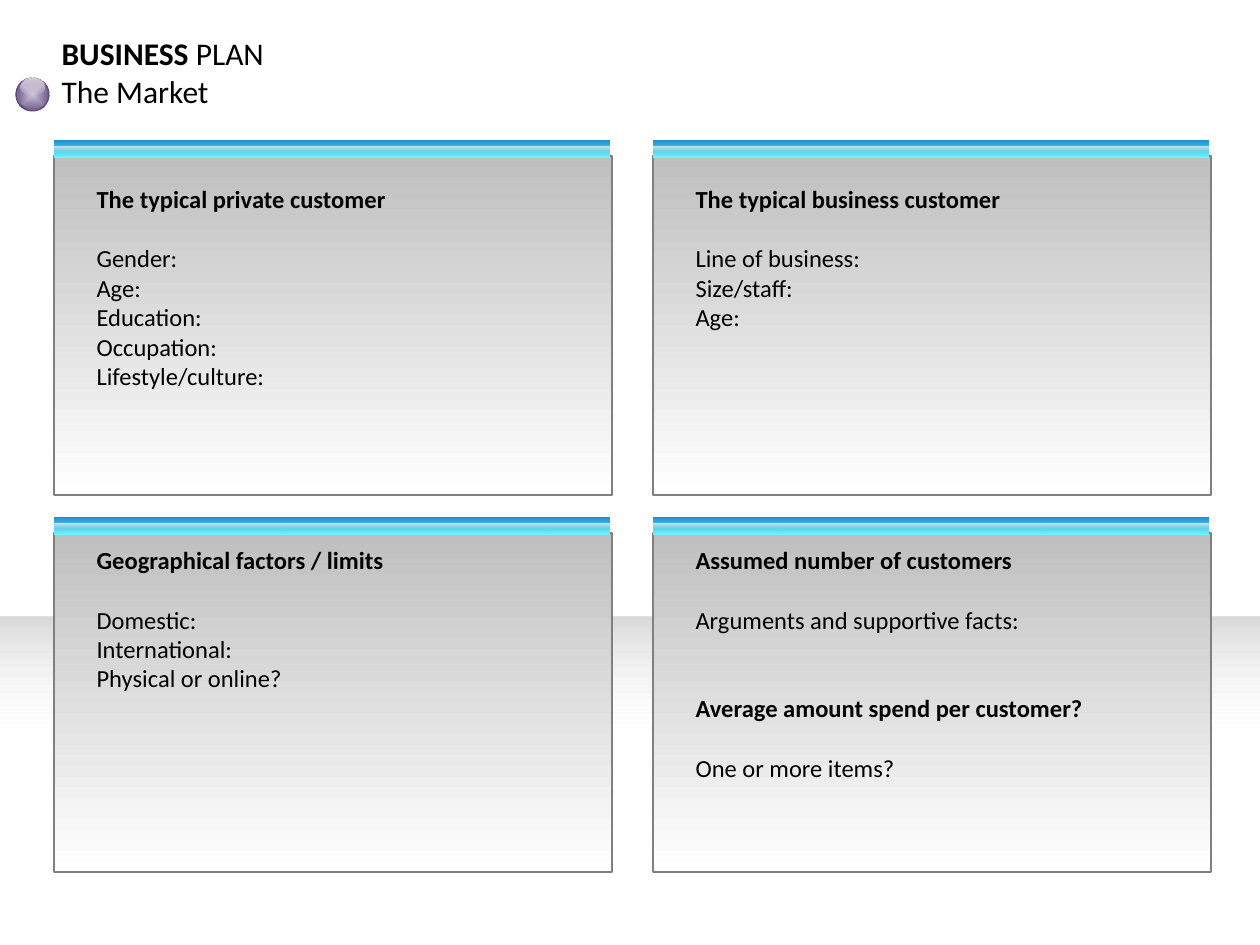
from lxml import etree
from pptx import Presentation
from pptx.dml.color import RGBColor
from pptx.enum.shapes import MSO_SHAPE
from pptx.enum.text import MSO_ANCHOR, MSO_AUTO_SIZE, PP_ALIGN
from pptx.oxml.ns import qn
from pptx.util import Pt

RECT, OVAL, MOON = MSO_SHAPE.RECTANGLE, MSO_SHAPE.OVAL, MSO_SHAPE.MOON
TOP, LEFT, GROW = MSO_ANCHOR.TOP, PP_ALIGN.LEFT, MSO_AUTO_SIZE.SHAPE_TO_FIT_TEXT
LINE_GAP = 17
PANELS = [
    (0, 0, 22, 251, [("The typical private customer", [
        "Gender:", "Age:", "Education:", "Occupation:", "Lifestyle/culture:"])]),
    (1, 0, 22, 221, [("The typical business customer", [
        "Line of business:", "Size/staff:", "Age:"])]),
    (0, 1, 6, 161, [("Geographical factors / limits", [
        "Domestic:", "International:", "Physical or online?"])]),
    (1, 1, 6, 280, [
        ("Assumed number of customers", ["Arguments and supportive facts:"]),
        ("Average amount spend per customer?", ["One or more items?"])]),
]


def px(n):
    return round(n * 914400 / 126)


def rgb(value):
    return RGBColor.from_string(value)


class Deck:
    """Holds the style and the current slide, and draws each kind of element."""

    font, ink = "Calibri", "000000"

    def __init__(self):
        self.prs = Presentation()
        self.prs.slide_width, self.prs.slide_height = px(1260), px(945)
        self.s = self.prs.slides.add_slide(self.prs.slide_layouts[4])
        self.holders = list(self.s.placeholders)
        self.parent = self.s.shapes

    def group(self):
        self.parent = self.s.shapes.add_group_shape().shapes

    def shape(self, kind, box, stops, line=None, radial=False, rotation=0):
        sp = self.parent.add_shape(kind, *map(px, box))
        sp.shadow.inherit = False
        sp.rotation = rotation
        sp.fill.gradient()
        sp.fill.gradient_angle = 90
        for stop, (position, color, alpha) in zip(sp.fill.gradient_stops, stops):
            stop.position = position / 100
            stop.color.rgb = rgb(color)
        for clr, (_, _, alpha) in zip(sp.element.iter(qn("a:srgbClr")), stops):
            if alpha < 100:
                etree.SubElement(clr, qn("a:alpha")).set("val", str(alpha * 1000))
        if radial:
            lin = next(sp.element.iter(qn("a:lin")))
            center = etree.Element(qn("a:path"), {"path": "shape"})
            etree.SubElement(center, qn("a:fillToRect"), dict.fromkeys("ltrb", "50000"))
            lin.getparent().replace(lin, center)
        if line:
            sp.line.color.rgb = rgb(line)
            sp.line.width = Pt(0.75)
        else:
            sp.line.fill.background()
        return sp

    def text(self, index, box, size, lines):
        sp = self.holders[index]
        sp.element.getparent().append(sp.element)
        sp.left, sp.top, sp.width, sp.height = map(px, box)
        tf = sp.text_frame
        tf.word_wrap, tf.auto_size, tf.vertical_anchor = True, GROW, TOP
        for i, (gap, runs) in enumerate(lines):
            p = tf.add_paragraph() if i else tf.paragraphs[0]
            p.alignment, p.space_before = LEFT, Pt(gap)
            p.font.name, p.font.size = self.font, Pt(size)
            p.font.color.rgb = rgb(self.ink)
            pPr = p._p.get_or_add_pPr()
            pPr.set("marL", "0")
            pPr.set("indent", "0")
            pPr.insert_element_before(etree.Element(qn("a:buNone")), "a:tabLst", "a:defRPr")
            if len(runs) == 1:
                p.font.bold = runs[0][1]
            for content, bold in runs:
                r = p.add_run()
                r.text = content
                if len(runs) > 1:
                    r.font.bold = bold

    def panel(self, index, column, row, inset, height, sections):
        x, y = 54 + 599 * column, 156 + 377 * row
        self.group()
        self.shape(RECT, (x, y, 558, 339),
                   [(0, "FFFFFF", 100), (100, "BFBFBF", 100)], line="808080")
        self.shape(RECT, (x, y - 16, 556, 18), [(0, "74F4FF", 100), (100, "208ECD", 100)])
        self.shape(RECT, (x, y - 9, 556, 5), [(0, "F3F3F3", 0), (100, "FFFCF9", 79)])
        lines = []
        for heading, items in sections:
            lines.append((2 * LINE_GAP if lines else 0, [(heading, True)]))
            lines += [(0 if i else LINE_GAP, [(item, False)]) for i, item in enumerate(items)]
        self.text(index, (x + 30, y + inset, 461, height), 14, lines)

    def orb(self):
        self.group()
        self.shape(OVAL, (16, 78, 33, 33), [(0, "CCC1DA", 100), (100, "604A7B", 100)],
                   line="604A7B", radial=True, rotation=350.9)
        self.shape(OVAL, (21, 78, 24, 18), [(0, "FFFFFF", 0), (100, "FFFCF9", 77)])
        moon = self.shape(MOON, (25, 87, 15, 33), [(24, "000000", 24), (100, "FFFFFF", 0)],
                          radial=True, rotation=275.9)
        moon.adjustments[0] = 0.19


def main():
    deck = Deck()
    deck.shape(RECT, (0, 617, 1260, 328), [(61, "FFFFFF", 0), (100, "D9D9D9", 100)])
    deck.text(0, (49, 28, 243, 89), 18, [
        (0, [("BUSINESS", True), (" PLAN", False)]), (0, [("The Market", False)])])
    for index, panel in enumerate(PANELS, 1):
        deck.panel(index, *panel)
    deck.orb()
    deck.prs.save("out.pptx")


if __name__ == "__main__":
    main()
